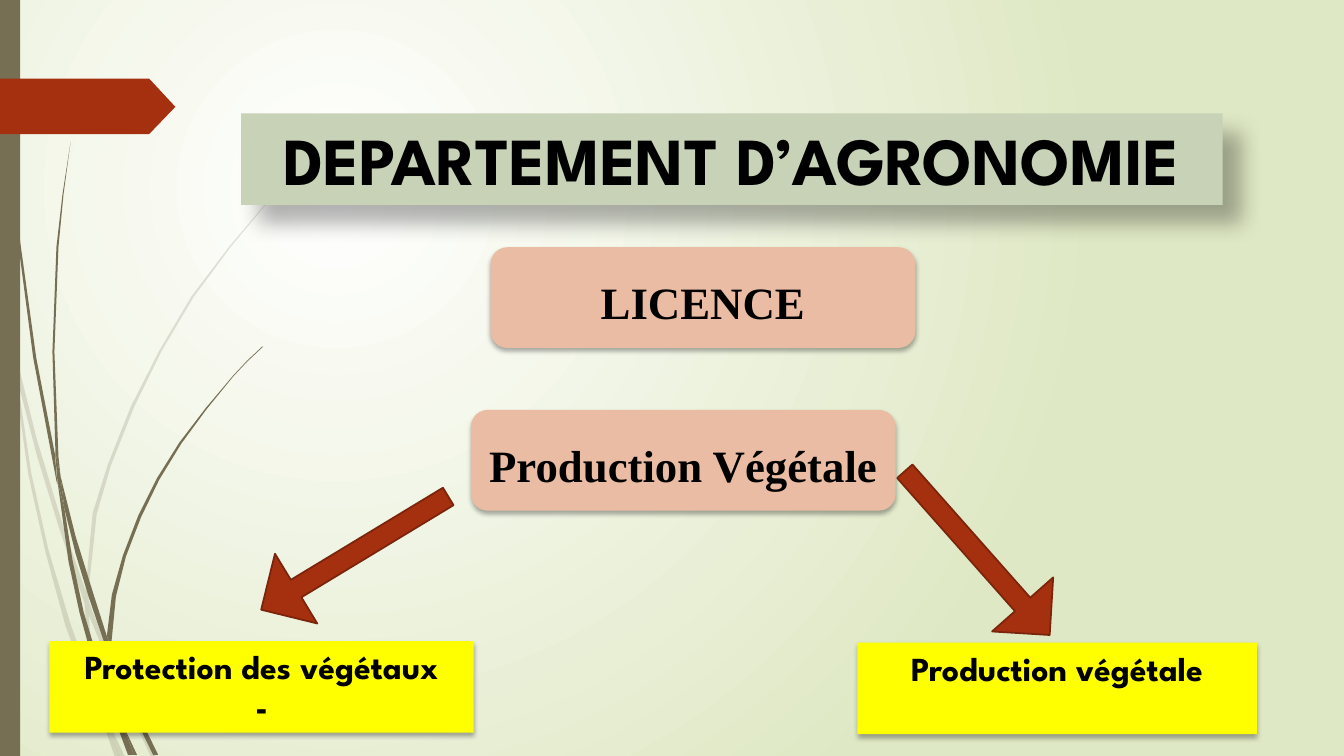
"""Build the agronomy department slide with its two plant-science branches."""
from lxml import etree
from pptx import Presentation
from pptx.dml.color import RGBColor
from pptx.enum import shapes, text
from pptx.oxml import ns
from pptx.util import Pt

COLORS = {
    "white": "FFFFFF", "meadow": "DFE8C4", "olive": "766F54", "rust": "A53010",
    "rust_line": "7A240C", "yellow": "FFFF00", "sage": "C7D2B7",
    "peach": "EBBCA4", "black": "000000",
}
RGB = {name: RGBColor.from_string(value) for name, value in COLORS.items()}
KIND = shapes.MSO_SHAPE


def paint(sp, color, line=None, shadow=None):
    """Fill a shape, with an optional outline and (alpha, blur, distance, angle) shadow."""
    sp.fill.solid()
    sp.fill.fore_color.rgb = RGB[color]
    if line:
        sp.line.color.rgb = RGB[line]
        sp.line.width = Pt(1.25)
    else:
        sp.line.fill.background()
    sp.shadow.inherit = False
    if shadow:
        alpha, blur, dist, angle = shadow
        effects = sp.element.spPr.find(ns.qn("a:effectLst"))
        outer = etree.SubElement(effects, ns.qn("a:outerShdw"), blurRad=str(Pt(blur)),
                                 dist=str(Pt(dist)), dir=str(angle * 60000),
                                 algn="tl", rotWithShape="0")
        clr = etree.SubElement(outer, ns.qn("a:srgbClr"), val=COLORS["black"])
        etree.SubElement(clr, ns.qn("a:alpha"), val=str(alpha * 1000))


def write(sp, lines, font, size, anchor, spacing=None):
    """Put centred bold black lines into a shape."""
    tf = sp.text_frame
    tf.text = lines
    tf.word_wrap = True
    tf.auto_size = text.MSO_AUTO_SIZE.NONE
    tf.vertical_anchor = anchor
    for p in tf.paragraphs:
        p.alignment = text.PP_ALIGN.CENTER
        if spacing:
            p.line_spacing = spacing
        for r in p.runs:
            r.font.name = font
            r.font.size = Pt(size)
            r.font.bold = True
            r.font.color.rgb = RGB["black"]


prs = Presentation()
prs.slide_width, prs.slide_height = Pt(960), Pt(540)
s = prs.slides.add_slide(prs.slide_layouts[5])

bg = s.background.fill
bg.gradient()
for stop, position, color in zip(bg.gradient_stops, (0, 1), ("white", "meadow")):
    stop.position = position
    stop.color.rgb = RGB[color]
grad = s.element.find(".//" + ns.qn("a:gradFill"))
grad.remove(grad.find(ns.qn("a:lin")))
glow = etree.SubElement(grad, ns.qn("a:path"), {"path": "circle"})
etree.SubElement(glow, ns.qn("a:fillToRect"), l="50000", t="50000", r="100000", b="100000")

UNIT = Pt(0.72)
pale_grass = [
    [(11, 350), (9, 322), (0, 282), (0, 299), (10, 344)],
    [(58, 522), (84, 599), (85, 586), (62, 520), (36, 434), (14, 345), (17, 376), (36, 450)],
    [(92, 607), (88, 596), (88, 610), (123, 694), (150, 751), (155, 751), (127, 692)],
    [(119, 751), (124, 751), (105, 711)],
    [(93, 683), (70, 619), (48, 545), (31, 469), (17, 376), (11, 350), (28, 470),
     (45, 547), (65, 621), (92, 693), (101, 714), (99, 707)],
    [(84, 599), (87, 646), (93, 683), (96, 692), (105, 711), (103, 706), (91, 646),
     (88, 610), (88, 608)],
    [(88, 584), (96, 510), (110, 462), (133, 404), (160, 349), (192, 295), (229, 245),
     (268, 198), (290, 175), (312, 154), (312, 153), (289, 175), (268, 197), (228, 244),
     (190, 294), (158, 348), (130, 403), (107, 461), (92, 509), (85, 584), (85, 586), (88, 596)],
    [(101, 714), (114, 751), (119, 751)],
    [(88, 608), (88, 610), (88, 596), (85, 586), (84, 599)],
    [(96, 692), (93, 683), (99, 707), (101, 714), (119, 751), (105, 711)],
]
solid_grass = [
    [(7, 110), (17, 233), (33, 355), (56, 477), (57, 481), (55, 457), (55, 453),
     (36, 355), (19, 232), (8, 109), (5, 48), (4, 0), (3, 0), (4, 48)],
    [(88, 592), (106, 645), (106, 633), (106, 631), (93, 590), (75, 532), (60, 472),
     (64, 505), (75, 549)],
    [(113, 649), (110, 641), (111, 656), (132, 708), (152, 749), (157, 749), (136, 706)],
    [(110, 691), (98, 657), (83, 607), (72, 556), (64, 505), (57, 477), (68, 557),
     (79, 608), (93, 659), (111, 708), (117, 722), (116, 717)],
    [(60, 472), (58, 453), (54, 349), (58, 245), (63, 193), (70, 141), (62, 193),
     (56, 245), (52, 349), (55, 449)],
    [(133, 749), (136, 749), (122, 719)],
    [(57, 477), (64, 505), (60, 472), (55, 449), (55, 453)],
    [(111, 633), (115, 592), (125, 552), (140, 513), (158, 476), (180, 440), (205, 406),
     (231, 374), (245, 359), (261, 344), (260, 344), (245, 358), (231, 373), (204, 405),
     (178, 439), (156, 474), (137, 512), (122, 551), (111, 590), (106, 631), (110, 641)],
    [(117, 722), (127, 749), (131, 749)],
    [(106, 645), (109, 651), (111, 656), (110, 641), (106, 631)],
    [(116, 706), (110, 691), (116, 717), (117, 722), (130, 749), (133, 749), (122, 719)],
]
for alpha, blades in [(20, pale_grass), (100, solid_grass)]:
    tuft = s.shapes.add_group_shape()
    for blade in blades:
        builder = tuft.shapes.build_freeform(*blade[0], scale=UNIT)
        builder.add_line_segments(blade[1:], close=True)
        sp = builder.convert_to_shape()
        paint(sp, "olive")
        if alpha < 100:
            clr = sp.element.spPr.find(".//" + ns.qn("a:srgbClr"))
            etree.SubElement(clr, ns.qn("a:alpha"), val=str(alpha * 1000))

side_bar = s.shapes.add_shape(KIND.RECTANGLE, 0, 0, Pt(14.4), Pt(540))
paint(side_bar, "olive")
builder = s.shapes.build_freeform(0, 78, scale=UNIT)
builder.add_line_segments([(148, 78), (174, 106), (148, 133), (0, 133)], close=True)
tag = builder.convert_to_shape()
paint(tag, "rust")

SOFT = (32, 3.5, 2.2, 90)
for label, left, top, width in [("Protection des végétaux\n-", 35.3, 457.9, 303.1),
                                ("Production végétale", 612.4, 459, 285.4)]:
    sp = s.shapes.add_shape(KIND.RECTANGLE, Pt(left), Pt(top), Pt(width), Pt(65.4))
    paint(sp, "yellow", shadow=SOFT)
    write(sp, label, "League Spartan", 24, text.MSO_ANCHOR.TOP)

title = s.shapes.title
title.left, title.top, title.width, title.height = Pt(172.2), Pt(80.9), Pt(701.2), Pt(65.4)
paint(title, "sage", shadow=(30, 15, 18, 45))
write(title, "DEPARTEMENT D’AGRONOMIE", "League Spartan", 48, text.MSO_ANCHOR.TOP)
title.text_frame.word_wrap = False
s.shapes.element.append(title.element)

for label, left, top in [("Production Végétale", 336.4, 292.8), ("LICENCE", 350.4, 176.6)]:
    sp = s.shapes.add_shape(KIND.ROUNDED_RECTANGLE, Pt(left), Pt(top), Pt(303.4), Pt(72))
    paint(sp, "peach", shadow=SOFT)
    write(sp, label, "Times New Roman", 32, text.MSO_ANCHOR.MIDDLE, 1.15)

for left, angle in [(224.2, 58.8), (668.9, 318.5)]:
    arrow = s.shapes.add_shape(KIND.DOWN_ARROW, Pt(left), Pt(317), Pt(58.3), Pt(156.2))
    arrow.adjustments[0], arrow.adjustments[1] = 0.25, 0.5
    arrow.rotation = angle
    paint(arrow, "rust", line="rust_line")

prs.save("out.pptx")
